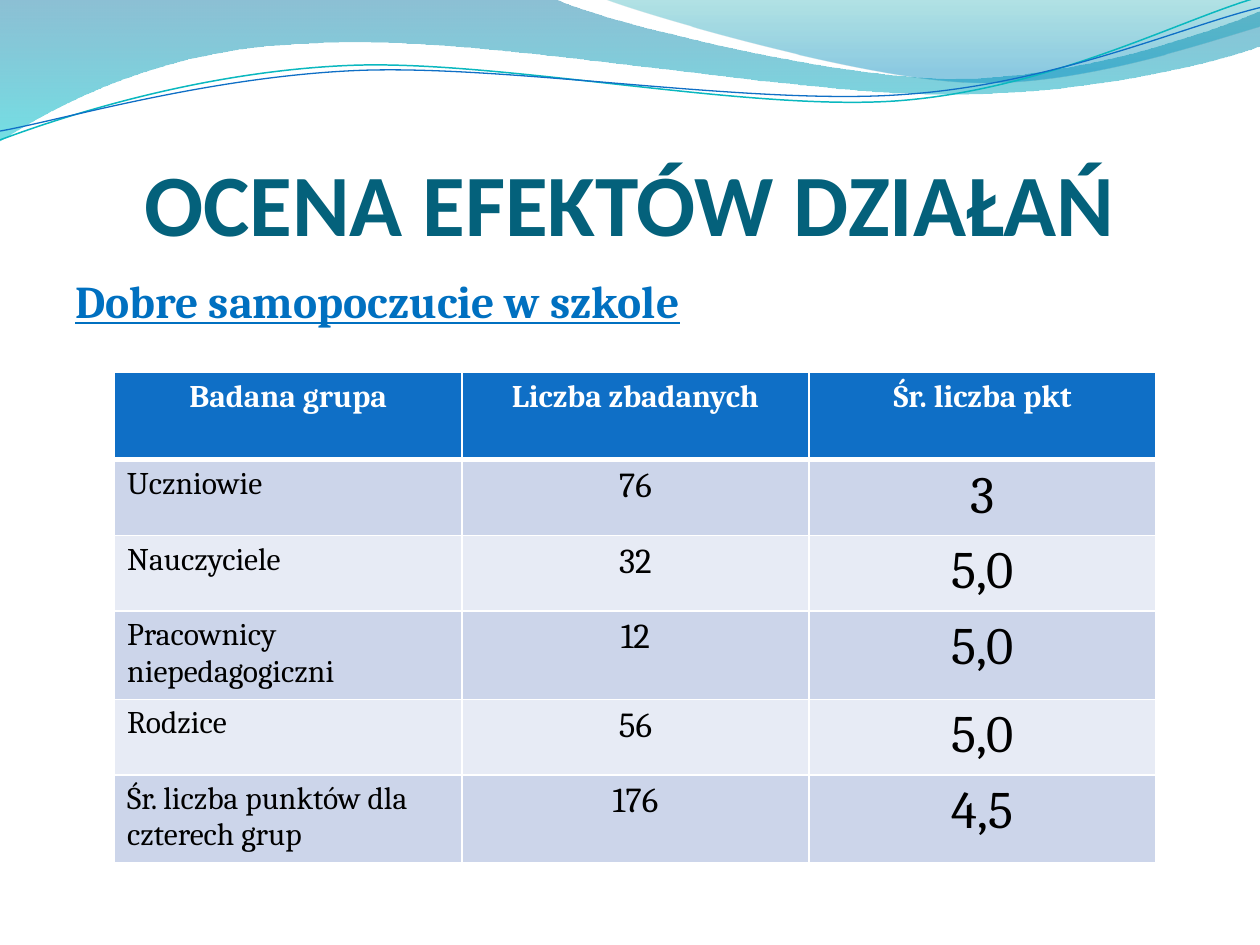
from math import cos, radians, sin

from lxml.etree import SubElement
from pptx import Presentation
from pptx.dml.color import RGBColor
from pptx.enum.text import MSO_ANCHOR as Anchor, MSO_AUTO_SIZE as AutoSize, PP_ALIGN as Align
from pptx.oxml.ns import qn
from pptx.util import Pt

WHITE = RGBColor(0xFF, 0xFF, 0xFF)
BLACK = RGBColor(0x00, 0x00, 0x00)
TITLE = RGBColor(0x04, 0x61, 0x7B)
HEADING = RGBColor(0x00, 0x70, 0xC0)
BLUE = RGBColor(0x0F, 0x6F, 0xC6)
TEAL = RGBColor(0x0A, 0xB8, 0xBF)
BAND_DARK = RGBColor(0xCC, 0xD5, 0xEA)
BAND_LIGHT = RGBColor(0xE7, 0xEB, 0xF5)
WAVE_TOP = RGBColor(0x00, 0x74, 0xA1)
WAVE_BOTTOM = RGBColor(0x00, 0xC6, 0xCF)
SHEEN_TOP = RGBColor(0x00, 0xA1, 0xA9)
SHEEN_BOTTOM = RGBColor(0x00, 0x8B, 0xBF)

WAVE = [(0, 0), (317, -0.7), (343, 12, 478, 45, 546, 45), (614, 45, 690, 19, 720, 6.5),
        (721, 26), (708, 32, 626, 55, 537, 54), (448, 54, 275, 20, 185, 24.5),
        (93, 26, 33, 60, -0.7, 81), (0, 0)]
SHEEN = [(345, -0.7), (366.5, 8, 491, 44.6, 553.7, 46.8), (616, 49.7, 692, 23, 720, 15),
         (720, 0), (345, -0.7)]
TEAL_LINE = [(0, 80), (34.6, 67, 113.8, 41, 199.4, 37.4),
             (284.4, 33.8, 427, 64, 513.4, 57.6), (599.8, 51, 675.4, 10.8, 718.6, -1.4)]
BLUE_LINE = [(0, 74.9), (33.8, 69, 118, 44, 203.8, 40.3),
             (290, 36.7, 430, 60.5, 516.2, 54), (602, 48.2, 676, 15, 720, 4.3)]

ROWS = [
    ("Badana grupa", "Liczba zbadanych", "Śr. liczba pkt"),
    ("Uczniowie", "76", "3"),
    ("Nauczyciele", "32", "5,0"),
    ("Pracownicy niepedagogiczni", "12", "5,0"),
    ("Rodzice", "56", "5,0"),
    ("Śr. liczba punktów dla czterech grup", "176", "4,5"),
]
BODY_SIZES = [18, 20, 30]


def turn(point, center, angle):
    dx, dy = point[0] - center[0], point[1] - center[1]
    c, s = cos(radians(angle)), sin(radians(angle))
    return center[0] + dx * c - dy * s, center[1] + dx * s + dy * c


class Deck:
    title_font = "Calibri"
    body_font = "Cambria"

    def __init__(self):
        self.prs = Presentation()
        self.prs.slide_width, self.prs.slide_height = Pt(720), Pt(540)
        self.s = self.prs.slides.add_slide(self.prs.slide_layouts[5])

    def style(self, p, name, size, color, bold=False, align=Align.LEFT):
        p.alignment = align
        f = p.font
        f.name, f.size, f.bold = name, Pt(size), bold
        f.color.rgb = color

    def freeform(self, segments, box, close, rotation=0):
        x, y, w, h = box
        center = x + w / 2, y + h / 2
        curves = [[turn(pt, center, -rotation) for pt in zip(seg[::2], seg[1::2])] for seg in segments]
        anchors = [(Pt(px), Pt(py)) for px, py in (pts[-1] for pts in curves)]
        builder = self.s.shapes.build_freeform(*anchors[0])
        builder.add_line_segments(anchors[1:], close=close)
        sp = builder.convert_to_shape()
        sp.left, sp.top, sp.width, sp.height = Pt(x), Pt(y), Pt(w), Pt(h)
        sp.rotation = rotation
        sp.shadow.inherit = False
        outline = next(sp._element.spPr.iter(qn("a:path")))
        for node in list(outline):
            outline.remove(node)
        outline.set("w", str(Pt(w)))
        outline.set("h", str(Pt(h)))
        for i, pts in enumerate(curves):
            kind = "moveTo" if i == 0 else "lnTo" if len(pts) == 1 else "cubicBezTo"
            node = SubElement(outline, qn("a:" + kind))
            for px, py in pts:
                SubElement(node, qn("a:pt"), x=str(Pt(px - x)), y=str(Pt(py - y)))
        if close:
            SubElement(outline, qn("a:close"))
        return sp

    def wave(self, segments, box, stops):
        sp = self.freeform(segments, box, True)
        sp.line.fill.background()
        sp.fill.gradient()
        sp.fill.gradient_angle = 270
        for stop, (position, color, _) in zip(sp.fill.gradient_stops, stops):
            stop.position = position
            stop.color.rgb = color
        colors = list(sp._element.spPr.iter(qn("a:srgbClr")))
        for node, (_, _, opacity) in zip(colors, stops):
            SubElement(node, qn("a:alpha"), val=str(opacity * 1000))

    def curve(self, segments, box, color, width):
        sp = self.freeform(segments, box, False, 357.3)
        sp.fill.background()
        sp.line.color.rgb = color
        sp.line.width = Pt(width)

    def title(self, text, x, y, w, h):
        sp = self.s.shapes.title
        sp.left, sp.top, sp.width, sp.height = Pt(x), Pt(y), Pt(w), Pt(h)
        tf = sp.text_frame
        tf.text = text
        tf.auto_size = AutoSize.NONE
        tf.vertical_anchor = Anchor.BOTTOM
        tf.margin_left = tf.margin_right = tf.margin_bottom = 0
        self.style(tf.paragraphs[0], self.title_font, 50, TITLE, True, Align.CENTER)

    def heading(self, text, x, y, w, h):
        tf = self.s.shapes.add_textbox(Pt(x), Pt(y), Pt(w), Pt(h)).text_frame
        tf.word_wrap = True
        p = tf.paragraphs[0]
        p.text = text
        self.style(p, self.body_font, 26, HEADING, True)
        p.font.underline = True

    def borders(self, cell, **widths):
        tc_pr = cell._tc.get_or_add_tcPr()
        for side in "LRTB":
            ln = SubElement(tc_pr, qn("a:ln" + side), w=str(Pt(widths.get(side, 1))))
            SubElement(SubElement(ln, qn("a:solidFill")), qn("a:srgbClr"), val=str(WHITE))

    def table(self, rows, x, y, w, h, row_height):
        frame = self.s.shapes.add_table(len(rows), len(rows[0]), Pt(x), Pt(y), Pt(w), Pt(h))
        tbl = frame.table
        for r, texts in enumerate(rows):
            tbl.rows[r].height = Pt(row_height)
            head = r == 0
            fill = BLUE if head else BAND_DARK if r % 2 else BAND_LIGHT
            for c, text in enumerate(texts):
                cell = tbl.cell(r, c)
                self.borders(cell, B=3 if head else 1, T=3 if r == 1 else 1)
                cell.fill.solid()
                cell.fill.fore_color.rgb = fill
                cell.text = text
                if head:
                    cell.margin_bottom = Pt(24.5)
                self.style(cell.text_frame.paragraphs[0], self.body_font,
                           18 if head else BODY_SIZES[c], WHITE if head else BLACK, head,
                           Align.CENTER if head or c else Align.LEFT)
        frame.height = Pt(h)


def main():
    deck = Deck()
    deck.wave(WAVE, (-0.7, -0.7, 721.7, 82), [(0, WAVE_TOP, 45), (1, WAVE_BOTTOM, 55)])
    deck.wave(SHEEN, (345, -0.7, 375, 50.4), [(0, SHEEN_TOP, 30), (0.8, SHEEN_BOTTOM, 45)])
    deck.curve(TEAL_LINE, (-1.4, 15.8, 721.5, 51), TEAL, 0.85)
    deck.curve(BLUE_LINE, (-1.4, 21.6, 722, 41.8), BLUE, 0.75)
    deck.title("OCENA EFEKTÓW DZIAŁAŃ", 36, 55, 648, 90)
    deck.heading("Dobre samopoczucie w szkole", 36, 152.5, 648, 345.5)
    deck.table(ROWS, 65.5, 213, 595.2, 281, 29.5)
    deck.prs.save("out.pptx")


if __name__ == "__main__":
    main()
